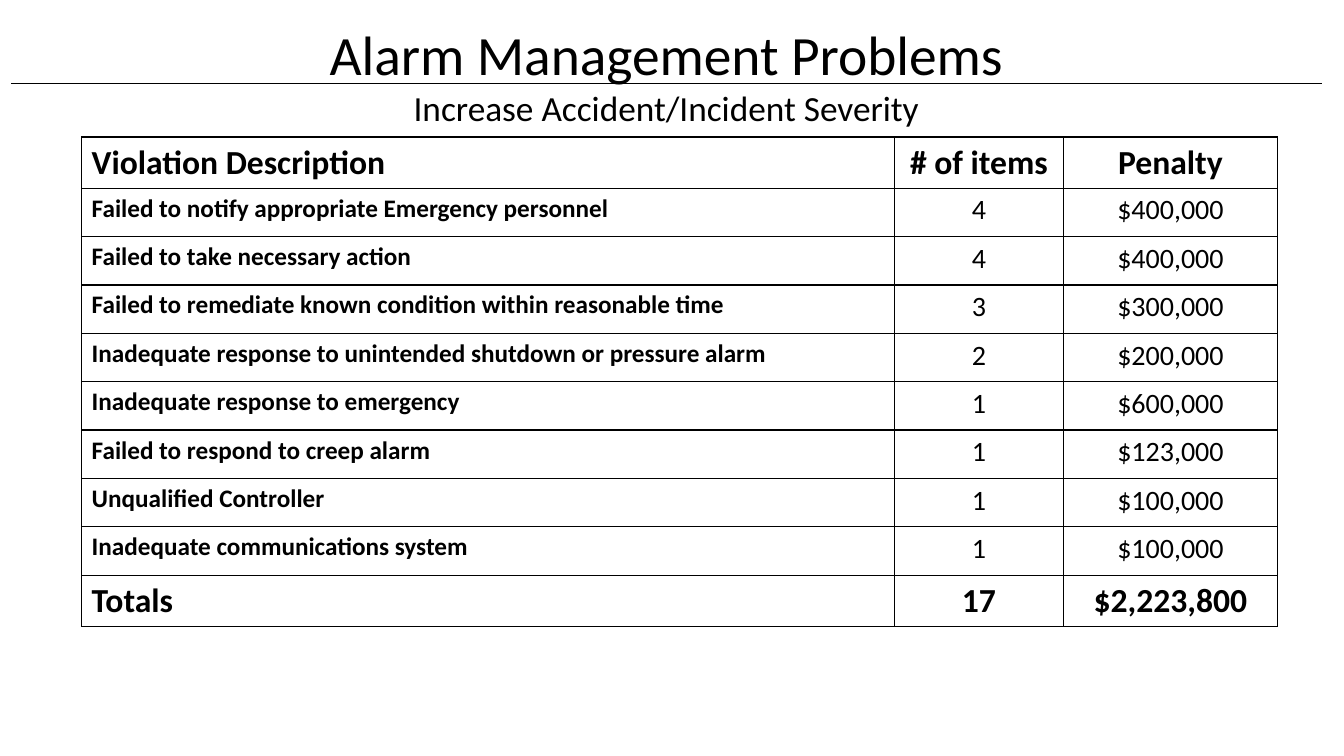
import dataclasses

import pptx
import pptx.dml.color
import pptx.enum.shapes
import pptx.enum.text
import pptx.oxml
import pptx.oxml.ns
import pptx.util

PX = 9144  # EMU per px, at 100 px to the inch
FONT = "Calibri"
HUES = {"ink": "000000", "paper": "FFFFFF"}
WIDTHS = (806, 168, 212)
ROW_H = 48
ALIGN = pptx.enum.text.PP_ALIGN


@dataclasses.dataclass
class Entry:
    label: str
    count: str
    fine: str
    strong: bool = False


ENTRIES = [
    Entry("Violation Description", "# of items", "Penalty", True),
    Entry("Failed to notify appropriate Emergency personnel", "4", "$400,000"),
    Entry("Failed to take necessary action", "4", "$400,000"),
    Entry("Failed to remediate known condition within reasonable time", "3", "$300,000"),
    Entry("Inadequate response to unintended shutdown or pressure alarm", "2", "$200,000"),
    Entry("Inadequate response to emergency", "1", "$600,000"),
    Entry("Failed to respond to creep alarm", "1", "$123,000"),
    Entry("Unqualified Controller", "1", "$100,000"),
    Entry("Inadequate communications system", "1", "$100,000"),
    Entry("Totals", "17", "$2,223,800", True),
]


def px(count: int) -> pptx.util.Emu:
    return pptx.util.Emu(count * PX)


def hue(name: str) -> pptx.dml.color.RGBColor:
    return pptx.dml.color.RGBColor.from_string(HUES[name])


def style(font, size: float, bold: bool = False) -> None:
    font.name = FONT
    font.size = pptx.util.Pt(size)
    font.bold = bold
    font.color.rgb = hue("ink")


def add_rule(slide) -> None:
    rule = slide.shapes.add_connector(
        pptx.enum.shapes.MSO_CONNECTOR.STRAIGHT, px(11), px(83), px(1311), px(83))
    rule.line.color.rgb = hue("ink")
    rule.line.width = pptx.util.Pt(0.75)
    props = rule.element.spPr
    props.append(props.makeelement(pptx.oxml.ns.qn("a:effectLst"), {}))


def set_title(slide) -> None:
    title = slide.shapes.title
    title.left, title.top, title.width, title.height = map(px, (218, 22, 886, 103))
    frame = title.text_frame
    frame.auto_size = pptx.enum.text.MSO_AUTO_SIZE.NONE
    frame.vertical_anchor = pptx.enum.text.MSO_ANCHOR.MIDDLE
    para = frame.paragraphs[0]
    para.alignment = ALIGN.CENTER
    para.font.size = pptx.util.Pt(39.6)
    head = para.add_run()
    head.text = "Alarm Management Problems"
    style(head.font, 39.6)
    para.add_line_break()
    sub = para.add_run()
    sub.text = "Increase Accident/Incident Severity"
    style(sub.font, 25.2)


def add_edges(cell) -> None:
    props = cell._tc.get_or_add_tcPr()
    for side in "LRTB":
        props.append(pptx.oxml.parse_xml(
            f'<a:ln{side} {pptx.oxml.ns.nsdecls("a")} w="12700"><a:solidFill>'
            f'<a:srgbClr val="{HUES["ink"]}"/></a:solidFill></a:ln{side}>'))


def fill_cell(cell, text: str, size: float, bold: bool, align) -> None:
    add_edges(cell)
    cell.fill.solid()
    cell.fill.fore_color.rgb = hue("paper")
    para = cell.text_frame.paragraphs[0]
    para.text = text
    para.alignment = align
    style(para.font, size, bold)


def add_grid(slide) -> None:
    frame = slide.shapes.add_table(
        len(ENTRIES), len(WIDTHS), px(81), px(136),
        px(sum(WIDTHS)), px(ROW_H * len(ENTRIES)))
    table = frame.table
    table.first_row = table.horz_banding = False
    for col, width in zip(table.columns, WIDTHS):
        col.width = px(width)
    for row, entry in zip(table.rows, ENTRIES):
        row.height = px(ROW_H)
        label, count, fine = row.cells
        fill_cell(label, entry.label, 24 if entry.strong else 18, True, ALIGN.LEFT)
        for cell, text in ((count, entry.count), (fine, entry.fine)):
            fill_cell(cell, text, 24 if entry.strong else 20, entry.strong, ALIGN.CENTER)


def main() -> None:
    deck = pptx.Presentation()
    deck.slide_width, deck.slide_height = px(1333), px(750)
    slide = deck.slides.add_slide(deck.slide_layouts.get_by_name("Title Only"))
    # Heading
    add_rule(slide)
    set_title(slide)
    # Violations and penalties
    add_grid(slide)
    deck.save("out.pptx")


if __name__ == "__main__":
    main()
